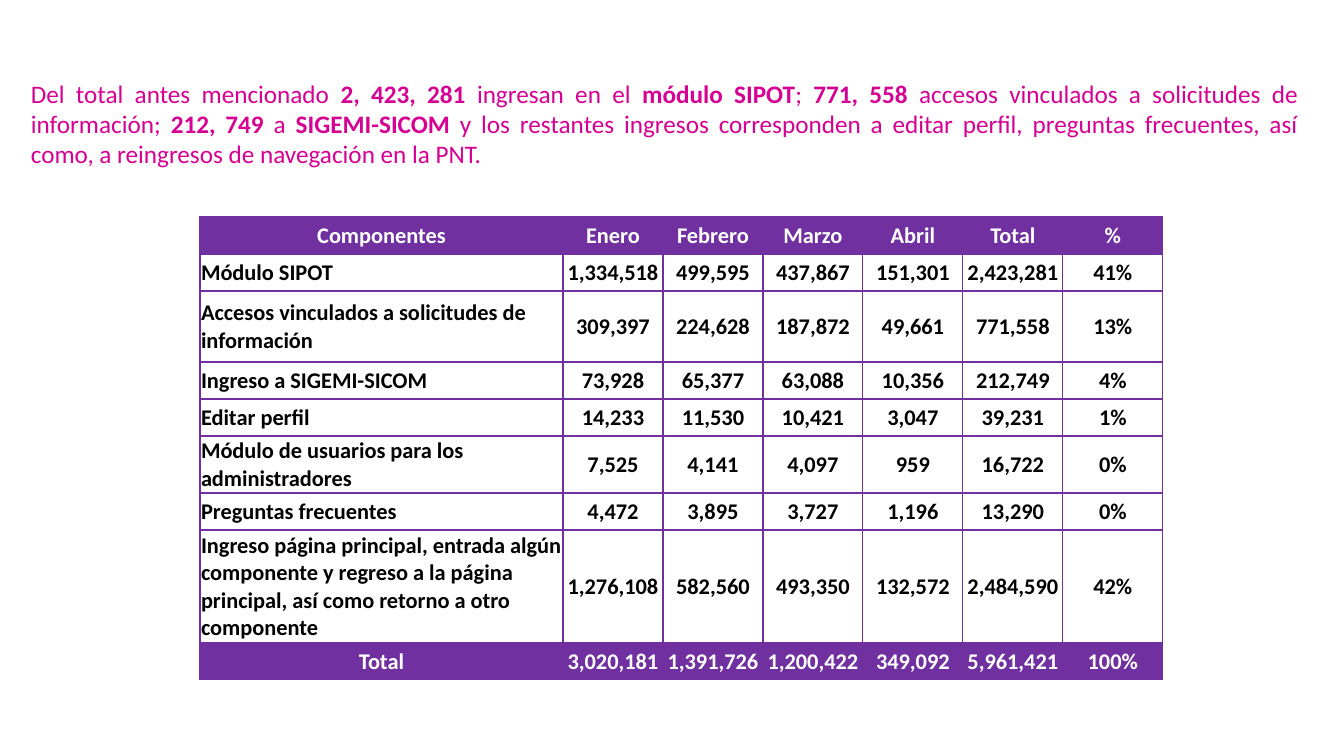
from lxml import etree
from pptx import Presentation
from pptx.dml.color import RGBColor
from pptx.enum.text import MSO_ANCHOR, PP_ALIGN
from pptx.oxml.ns import qn
from pptx.util import Pt

CENTER, LEFT, JUSTIFY = PP_ALIGN.CENTER, PP_ALIGN.LEFT, PP_ALIGN.JUSTIFY
MIDDLE = MSO_ANCHOR.MIDDLE
PURPLE = RGBColor(0x70, 0x30, 0xA0)
MAGENTA = RGBColor(0xD6, 0x00, 0x93)
WHITE = RGBColor(0xFF, 0xFF, 0xFF)
BLACK = RGBColor(0x00, 0x00, 0x00)
FONT = "Calibri"

INTRO = [
    ("Del total antes mencionado ", False),
    ("2, 423, 281 ", True),
    ("ingresan en el ", False),
    ("módulo SIPOT", True),
    ("; ", False),
    ("771, 558 ", True),
    ("accesos vinculados a solicitudes de información; ", False),
    ("212, 749 ", True),
    ("a ", False),
    ("SIGEMI-SICOM", True),
    (" y los restantes ingresos corresponden a editar perfil, preguntas frecuentes, "
     "así como, a reingresos de navegación en la PNT.", False),
]
ACCESSES = [
    ("Componentes", "Enero", "Febrero", "Marzo", "Abril", "Total", "%"),
    ("Módulo SIPOT", "1,334,518", "499,595", "437,867", "151,301", "2,423,281", "41%"),
    ("Accesos vinculados a solicitudes de información",
     "309,397", "224,628", "187,872", "49,661", "771,558", "13%"),
    ("Ingreso a SIGEMI-SICOM", "73,928", "65,377", "63,088", "10,356", "212,749", "4%"),
    ("Editar perfil", "14,233", "11,530", "10,421", "3,047", "39,231", "1%"),
    ("Módulo de usuarios para los administradores",
     "7,525", "4,141", "4,097", "959", "16,722", "0%"),
    ("Preguntas frecuentes", "4,472", "3,895", "3,727", "1,196", "13,290", "0%"),
    ("Ingreso página principal, entrada algún componente y regreso a la página principal, "
     "así como retorno a otro componente",
     "1,276,108", "582,560", "493,350", "132,572", "2,484,590", "42%"),
    ("Total", "3,020,181", "1,391,726", "1,200,422", "349,092", "5,961,421", "100%"),
]
COLUMN_WIDTHS = [363] + [100] * 6
ROW_HEIGHTS = [37, 37, 71, 37, 37, 57, 37, 113, 37]


def px(length):
    return round(length * 914400 / 100.8)


def add_borders(cell):
    properties = cell._tc.get_or_add_tcPr()
    for side in ("lnL", "lnR", "lnT", "lnB"):
        line = etree.SubElement(properties, qn(f"a:{side}"), w=str(Pt(1)))
        solid = etree.SubElement(line, qn("a:solidFill"))
        etree.SubElement(solid, qn("a:srgbClr"), val=str(PURPLE))


def style_font(font, size, color):
    font.name = FONT
    font.size = Pt(size)
    font.color.rgb = color


def fill_cell(cell, text, band, align):
    cell.vertical_anchor = MIDDLE
    cell.margin_left = cell.margin_right = cell.margin_top = px(1)
    cell.margin_bottom = 0
    add_borders(cell)
    if band:
        cell.fill.solid()
        cell.fill.fore_color.rgb = PURPLE
    else:
        cell.fill.background()
    paragraph = cell.text_frame.paragraphs[0]
    paragraph.text = text
    paragraph.alignment = align
    style_font(paragraph.font, 16, WHITE if band else BLACK)
    paragraph.font.bold = True


def add_accesses(slide):
    frame = slide.shapes.add_table(
        len(ACCESSES), len(COLUMN_WIDTHS), px(200), px(217),
        px(sum(COLUMN_WIDTHS)), px(sum(ROW_HEIGHTS)))
    accesses = frame.table
    accesses.first_row = accesses.horz_banding = False
    for column, width in zip(accesses.columns, COLUMN_WIDTHS):
        column.width = px(width)
    for row, height in zip(accesses.rows, ROW_HEIGHTS):
        row.height = px(height)
    for r, values in enumerate(ACCESSES):
        band = r in (0, len(ACCESSES) - 1)
        for c, value in enumerate(values):
            align = LEFT if c == 0 and not band else CENTER
            fill_cell(accesses.cell(r, c), value, band, align)


def add_intro(slide):
    intro = slide.shapes.add_textbox(px(21), px(73), px(1287), px(102)).text_frame
    intro.word_wrap = True
    paragraph = intro.paragraphs[0]
    paragraph.alignment = JUSTIFY
    style_font(paragraph.font, 18, MAGENTA)
    for text, bold in INTRO:
        run = paragraph.add_run()
        run.text = text
        run.font.bold = bold


def main():
    deck = Presentation()
    deck.slide_width, deck.slide_height = px(1344), px(756)
    slide = deck.slides.add_slide(deck.slide_layouts[6])
    add_accesses(slide)
    add_intro(slide)
    deck.save("out.pptx")


if __name__ == "__main__":
    main()
